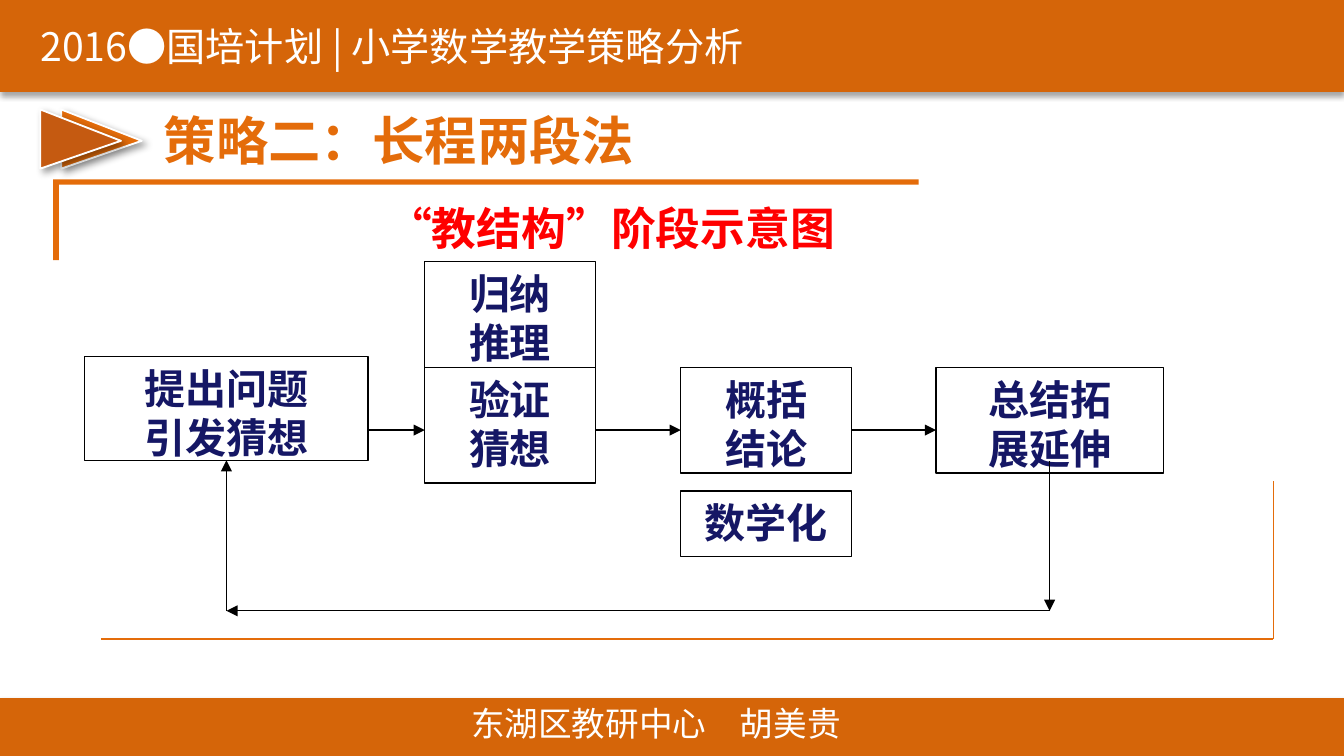
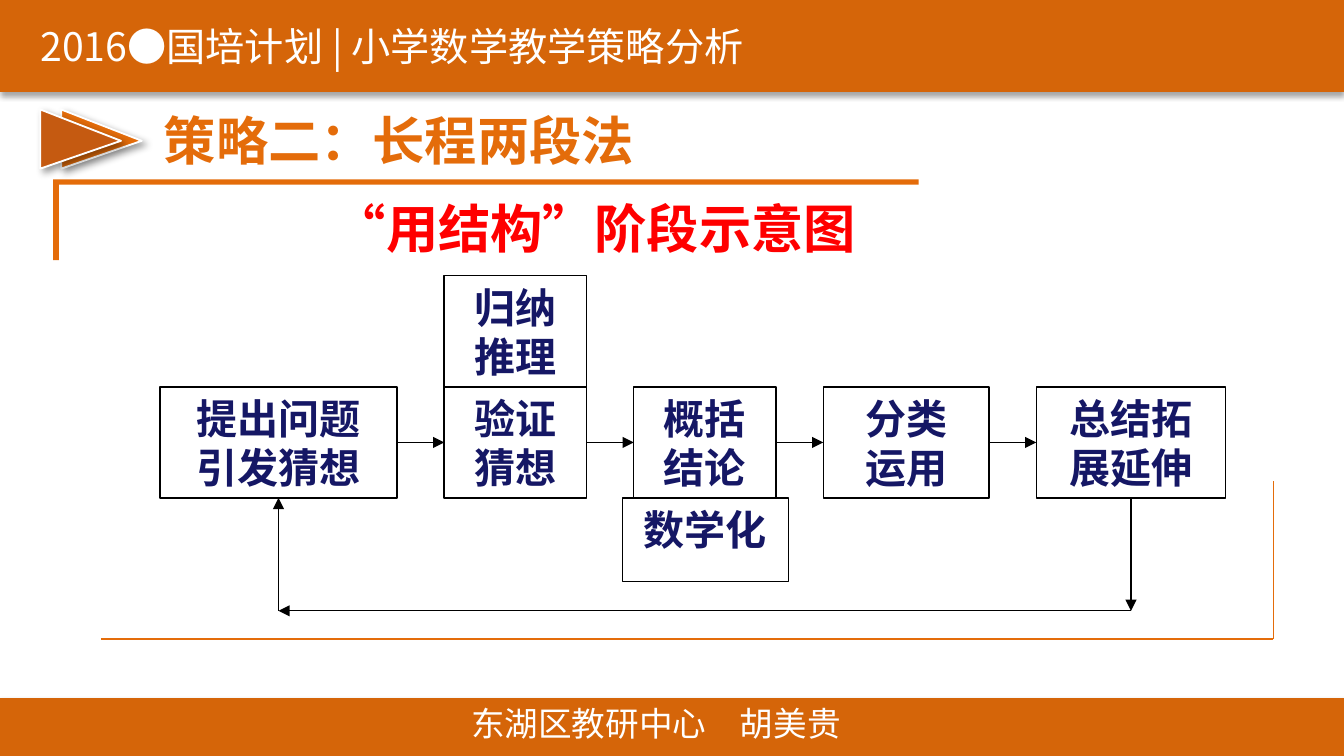
from lxml import etree
from pptx import Presentation
from pptx.dml.color import RGBColor
from pptx.enum.shapes import MSO_CONNECTOR, MSO_SHAPE
from pptx.enum.text import MSO_ANCHOR, PP_ALIGN
from pptx.oxml.ns import qn
from pptx.util import Pt

PX = 4572  # 200 px to the inch
RECT, TRIANGLE = MSO_SHAPE.RECTANGLE, MSO_SHAPE.ISOSCELES_TRIANGLE
STRAIGHT = MSO_CONNECTOR.STRAIGHT
LEFT, CENTER = PP_ALIGN.LEFT, PP_ALIGN.CENTER
TOP, MIDDLE = MSO_ANCHOR.TOP, MSO_ANCHOR.MIDDLE
SIDE_LEFT, SIDE_BOTTOM, SIDE_RIGHT = 1, 2, 3

FONT = "Noto Sans CJK SC"
COLORS = {
    "band": "D56509",
    "accent": "E46C0A",
    "dark accent": "C55A11",
    "white": "FFFFFF",
    "black": "000000",
    "title": "FF0000",
    "step": "151765",
}
RETURN_Y = 909  # height of the arrow that leads back to the first step

# Each step: lines, left, top, width, height
STAGES = [
    {
        "title": ("“教结构”阶段示意图 ", 24, (342, 244, 1150, 188)),
        "flow_y": 640,
        "drop_y": 686,
        "steps": [
            (("提出问题", "引发猜想"), 126, 531, 422, 154),
            (("验证", "猜想"), 632, 547, 254, 172),
            (("概括", "结论"), 1013, 547, 254, 157),
            (("总结拓", "展延伸"), 1393, 547, 338, 157),
        ],
        "side_notes": [
            (("归纳", "推理"), 632, 389, 254, 158),
            (("数学化",), 1013, 731, 254, 97),
        ],
    },
    {
        "title": ("“用结构”阶段示意图 ", 28, (394, 268, 1000, 142)),
        "flow_y": 658,
        "drop_y": 741,
        "steps": [
            (("提出问题", "引发猜想"), 238, 576, 353, 165),
            (("验证", "猜想"), 661, 576, 212, 165),
            (("概括", "结论"), 943, 576, 212, 165),
            (("分类", "运用"), 1225, 576, 247, 165),
            (("总结拓", "展延伸"), 1542, 576, 282, 165),
        ],
        "side_notes": [
            (("归纳", "推理"), 661, 410, 212, 166),
            (("数学化",), 926, 741, 247, 124),
        ],
    },
]

# Shared frame: left, top, width, height
BANDS = [(0, 0, 2000, 137), (0, 1039, 2000, 86)]
TITLE_BARS = [(79, 268, 9, 119), (79, 267, 1288, 8)]
POINTERS = [(107, "accent"), (76, "dark accent")]
CORNER_LINES = [(150, 951, 1895, 951), (1895, 951, 1895, 716)]
CAPTIONS = [
    ("2016●国培计划 | 小学数学教学策略分析", 21, "white", False, (45, 25, 1322, 86)),
    ("东湖区教研中心　胡美贵", 18, "white", False, (686, 1038, 604, 76)),
    ("策略二：长程两段法", 28, "accent", True, (229, 153, 1322, 110)),
]


def write(shape, lines, size, color, bold=False, align=LEFT, anchor=TOP, inset=(15, 8)):
    frame = shape.text_frame
    frame.word_wrap = True
    frame.vertical_anchor = anchor
    frame.margin_left = frame.margin_right = inset[0] * PX
    frame.margin_top = frame.margin_bottom = inset[1] * PX
    for i, line in enumerate(lines):
        paragraph = frame.paragraphs[0] if i == 0 else frame.add_paragraph()
        paragraph.alignment = align
        run = paragraph.add_run()
        run.text = line
        run.font.size, run.font.bold, run.font.name = Pt(size), bold, FONT
        run.font.color.rgb = RGBColor.from_string(COLORS[color])
        etree.SubElement(run.font._element, qn("a:ea"), typeface=FONT)


def style(shape, fill=None, line=None, width=0.75, shadow=None, arrow=False):
    """Set fill and line; shadow is (blur pt, distance pt, degrees, opacity %)."""
    if fill:
        shape.fill.solid()
        shape.fill.fore_color.rgb = RGBColor.from_string(COLORS[fill])
    elif hasattr(shape, "fill"):
        shape.fill.background()
    if line:
        shape.line.color.rgb = RGBColor.from_string(COLORS[line])
        shape.line.width = Pt(width)
    else:
        shape.line.fill.background()
    if arrow:
        etree.SubElement(shape.line._get_or_add_ln(), qn("a:tailEnd"), type="triangle")
    effects = etree.SubElement(shape._element.spPr, qn("a:effectLst"))
    if shadow:
        blur, distance, degrees, opacity = shadow
        outer = etree.SubElement(
            effects, qn("a:outerShdw"), blurRad=str(Pt(blur)), dist=str(Pt(distance)),
            dir=str(degrees * 60000), algn="ctr", rotWithShape="0")
        tint = etree.SubElement(outer, qn("a:srgbClr"), val=COLORS["black"])
        etree.SubElement(tint, qn("a:alpha"), val=str(opacity * 1000))


prs = Presentation()
prs.slide_width, prs.slide_height = 2000 * PX, 1125 * PX

for stage in STAGES:
    shapes = prs.slides.add_slide(prs.slide_layouts[6]).shapes

    # Header and footer bands
    for area in BANDS:
        band = shapes.add_shape(RECT, *(v * PX for v in area))
        style(band, "band", shadow=(3.1, 1.8, 90, 35))

    # Thin corner at the lower right
    for ends in CORNER_LINES:
        style(shapes.add_connector(STRAIGHT, *(v * PX for v in ends)), line="accent")

    # Heading bars and double pointer
    for area in TITLE_BARS:
        style(shapes.add_shape(RECT, *(v * PX for v in area)), "accent")
    for left, fill in POINTERS:
        pointer = shapes.add_shape(TRIANGLE, left * PX, 147 * PX, 88 * PX, 120 * PX)
        pointer.rotation = 90
        pointer.adjustments[0] = 0.53
        style(pointer, fill, "white", 1, shadow=(4, 3, 45, 40))

    # Captions and stage title
    for text, size, color, bold, area in CAPTIONS:
        caption = shapes.add_textbox(*(v * PX for v in area))
        write(caption, [text], size, color, bold)
    text, size, area = stage["title"]
    stage_title = shapes.add_textbox(*(v * PX for v in area))
    write(stage_title, [text], size, "title", True, CENTER, MIDDLE)

    # Steps, then the notes beside them
    boxes = []
    for lines, *area in stage["steps"] + stage["side_notes"]:
        box = shapes.add_shape(RECT, *(v * PX for v in area))
        style(box, line="black")
        write(box, lines, 22, "step", True, CENTER, inset=(20, 10))
        boxes.append(box)
    steps = boxes[:len(stage["steps"])]

    # Arrows from step to step, joined where they meet the middle of a side
    flow_y = stage["flow_y"] * PX
    for before, after in zip(steps, steps[1:]):
        arrow = shapes.add_connector(
            STRAIGHT, before.left + before.width, flow_y, after.left, flow_y)
        if abs(before.top + before.height / 2 - flow_y) < PX:
            arrow.begin_connect(before, SIDE_RIGHT)
        if abs(after.top + after.height / 2 - flow_y) < PX:
            arrow.end_connect(after, SIDE_LEFT)
        style(arrow, line="black", arrow=True)

    # Way back from the last step to the first
    first, last = steps[0], steps[-1]
    first_x, last_x = (box.left + box.width // 2 for box in (first, last))
    return_y, drop_y = RETURN_Y * PX, stage["drop_y"] * PX
    rise = shapes.add_connector(STRAIGHT, first_x, return_y, first_x, first.top + first.height)
    rise.end_connect(first, SIDE_BOTTOM)
    drop = shapes.add_connector(STRAIGHT, last_x, drop_y, last_x, return_y)
    if last.top + last.height == drop_y:
        drop.begin_connect(last, SIDE_BOTTOM)
    back = shapes.add_connector(STRAIGHT, last_x, return_y, first_x, return_y)
    for arrow in (rise, drop, back):
        style(arrow, line="black", arrow=True)

prs.save("out.pptx")
